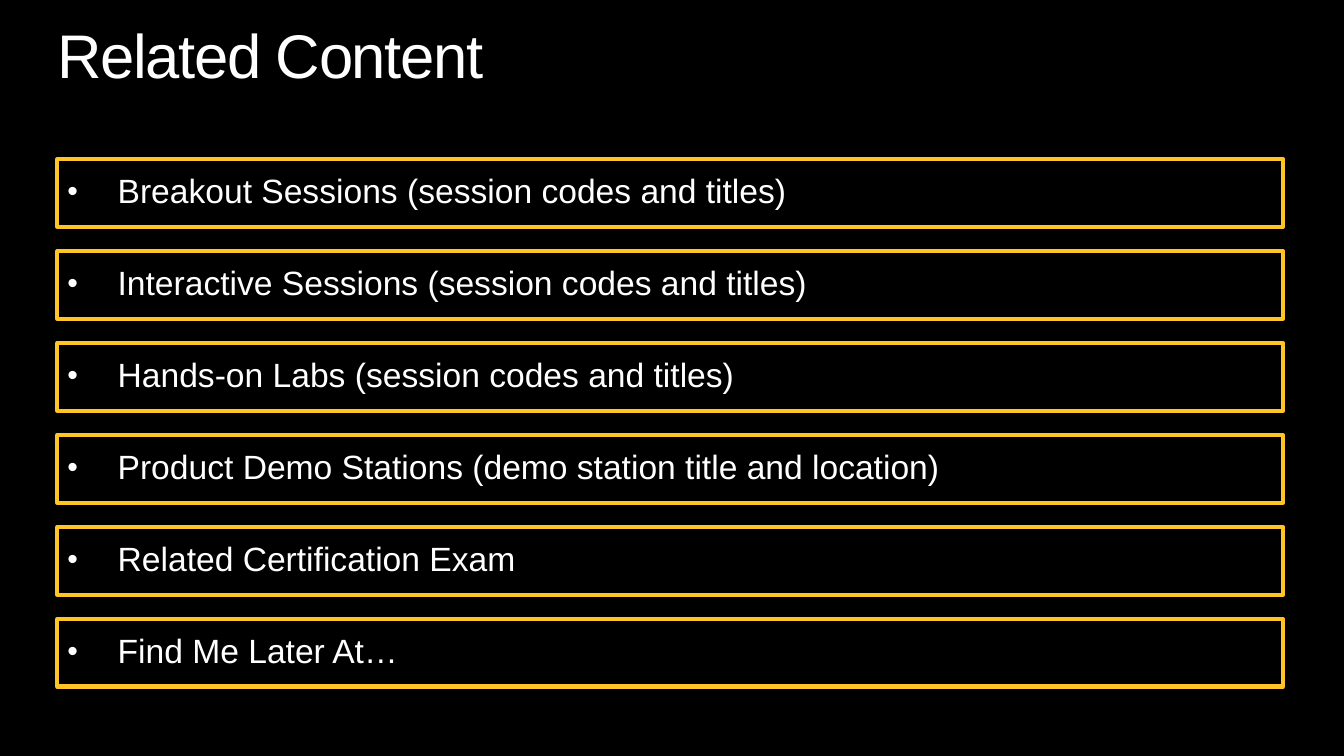
from lxml import etree
from pptx import Presentation
from pptx.dml.color import RGBColor
from pptx.enum.shapes import MSO_SHAPE
from pptx.enum.text import MSO_ANCHOR, PP_ALIGN
from pptx.oxml.ns import qn
from pptx.util import Pt

RECTANGLE = MSO_SHAPE.RECTANGLE
MIDDLE = MSO_ANCHOR.MIDDLE
LEFT = PP_ALIGN.LEFT

TOPICS = [
    "Breakout Sessions (session codes and titles)",
    "Interactive Sessions (session codes and titles)",
    "Hands-on Labs (session codes and titles)",
    "Product Demo Stations (demo station title and location)",
    "Related Certification Exam",
    "Find Me Later At…",
]
MARGIN_LEFT = 41
BAR_TOP, BAR_STEP = 113.8, 65.7
BAR_WIDTH, BAR_HEIGHT = 875.5, 48.2


def color(hex_string):
    return RGBColor.from_string(hex_string)


def format_text(shape, size, inset_x, inset_y):
    """Style a one-paragraph shape and return its paragraph."""
    frame = shape.text_frame
    frame.word_wrap = True
    frame.vertical_anchor = MIDDLE
    frame.margin_left = frame.margin_right = Pt(inset_x)
    frame.margin_top = frame.margin_bottom = Pt(inset_y)
    para = frame.paragraphs[0]
    para.alignment = LEFT
    para.line_spacing = 0.9
    para.space_before = Pt(0)
    font = para.runs[0].font
    font.name = "Arial"
    font.size = Pt(size)
    font.color.rgb = color("FFFFFF")
    return para


deck = Presentation()
deck.slide_width, deck.slide_height = Pt(960), Pt(540)
page = deck.slides.add_slide(deck.slide_layouts[5])
page.background.fill.solid()
page.background.fill.fore_color.rgb = color("000000")

title = page.shapes.title
title.left, title.top = Pt(MARGIN_LEFT), Pt(18)
title.width, title.height = Pt(877.7), Pt(48.2)
title.text_frame.text = "Related Content"
title_para = format_text(title, 44, 0, 0)
title_para.runs[0].font._element.set("spc", "-100")

for row, topic in enumerate(TOPICS):
    bar = page.shapes.add_shape(
        RECTANGLE, Pt(MARGIN_LEFT), Pt(BAR_TOP + row * BAR_STEP),
        Pt(BAR_WIDTH), Pt(BAR_HEIGHT))
    bar.shadow.inherit = False
    bar.fill.background()
    bar.line.color.rgb = color("FFC425")
    bar.line.width = Pt(3)
    bar.text_frame.text = topic
    para = format_text(bar, 24, 7.2, 10.8)
    properties = para._p.get_or_add_pPr()
    properties.set("marL", str(Pt(36)))
    properties.set("indent", str(Pt(-36)))
    etree.SubElement(properties, qn("a:buSzPct"), val="90000")
    etree.SubElement(properties, qn("a:buFont"), typeface="Arial")
    etree.SubElement(properties, qn("a:buChar"), char="•")

deck.save("out.pptx")
